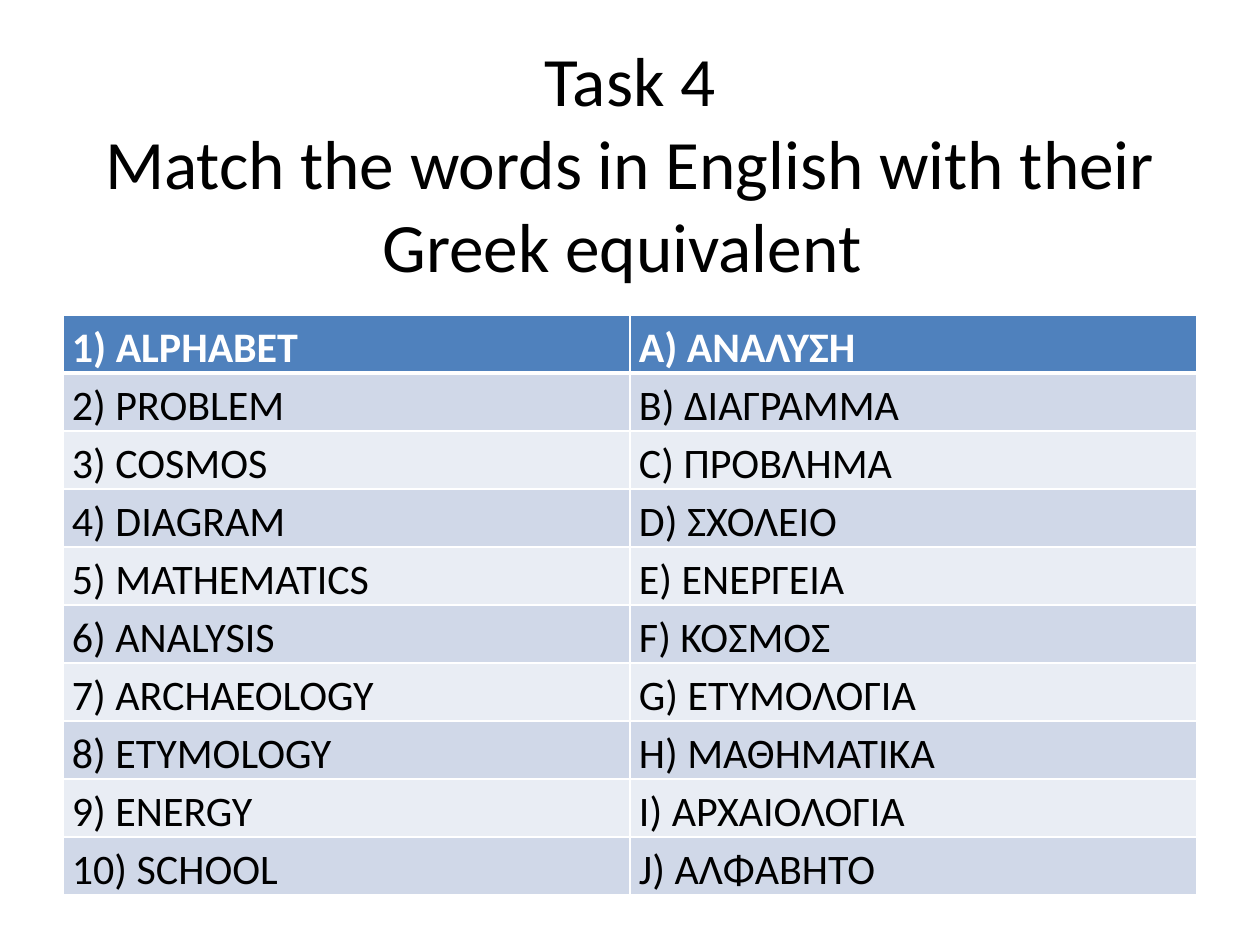
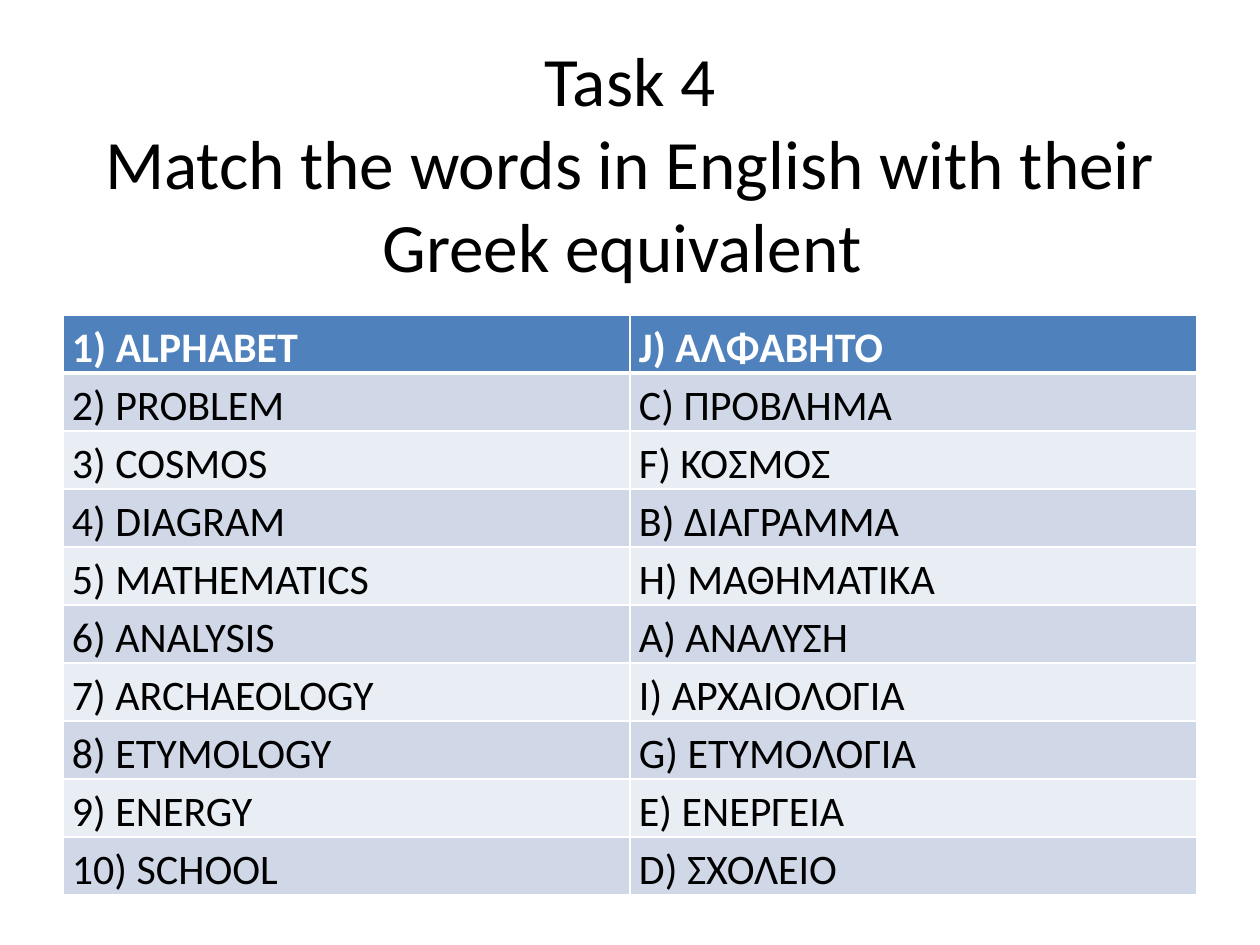
from lxml import etree
from pptx import Presentation
from pptx.dml.color import RGBColor
from pptx.enum.text import MSO_ANCHOR, PP_ALIGN
from pptx.oxml.ns import qn
from pptx.util import Emu, Pt

TITLE_LINES = ["Task 4", "Match the words in English with their Greek equivalent "]
ENGLISH = ["ALPHABET", "PROBLEM", "COSMOS", "DIAGRAM", "MATHEMATICS",
           "ANALYSIS", "ARCHAEOLOGY", "ETYMOLOGY", "ENERGY", "SCHOOL"]
GREEK = {
    "A": "ΑΝΑΛΥΣΗ", "B": "ΔΙΑΓΡΑΜΜΑ", "C": "ΠΡΟΒΛΗΜΑ", "D": "ΣΧΟΛΕΙΟ",
    "E": "ΕΝΕΡΓΕΙΑ", "F": "ΚΟΣΜΟΣ", "G": "ΕΤΥΜΟΛΟΓΙΑ", "H": "ΜΑΘΗΜΑΤΙΚΑ",
    "I": "ΑΡΧΑΙΟΛΟΓΙΑ", "J": "ΑΛΦΑΒΗΤΟ",
}
QUESTION_ORDER = "ABCDEFGHIJ"
ANSWER_ORDER = "JCFBHAIGED"

WHITE = RGBColor(0xFF, 0xFF, 0xFF)
BLACK = RGBColor(0x00, 0x00, 0x00)
HEADER_BLUE = RGBColor(0x4F, 0x81, 0xBD)
BANDS = [RGBColor(0xE9, 0xED, 0xF4), RGBColor(0xD0, 0xD8, 0xE8)]

PX_PER_INCH = 126
PAGE_SIZE = (1260, 945)
TITLE_BOX = (63, 38, 1134, 238)
TABLE_LEFT, TABLE_TOP, TABLE_WIDTH, ROW_HEIGHT = 63, 315, 1134, 58

TITLE_FRAME = {"margin_top": 10, "margin_bottom": 0, "margin_left": 13, "margin_right": 13}
CELL_MARGINS = {"margin_left": 9, "margin_right": 9, "margin_top": 0, "margin_bottom": 0}
TITLE_FONT = {"name": "Calibri", "size": Pt(39.6)}
CELL_FONT = {"name": "Calibri", "size": Pt(24)}


def px(length):
    return Emu(round(length * 914400 / PX_PER_INCH))


def set_all(target, values):
    for name, value in values.items():
        setattr(target, name, value)


def set_margins(target, margins):
    set_all(target, {name: px(length) for name, length in margins.items()})


def set_font(font, values, color):
    set_all(font, values)
    font.color.rgb = color


def add_title(page):
    box = page.shapes.add_textbox(*map(px, TITLE_BOX))
    frame = box.text_frame
    frame.word_wrap = True
    frame.vertical_anchor = MSO_ANCHOR.MIDDLE
    set_margins(frame, TITLE_FRAME)
    para = frame.paragraphs[0]
    para.alignment = PP_ALIGN.CENTER
    for number, line in enumerate(TITLE_LINES):
        if number:
            para.add_line_break()
        span = para.add_run()
        span.text = line
        set_font(span.font, TITLE_FONT, BLACK)


def add_borders(cell, top, bottom):
    """Draw white cell edges; top and bottom are widths in points."""
    properties = cell._tc.get_or_add_tcPr()
    for side, width in (("L", 1), ("R", 1), ("T", top), ("B", bottom)):
        edge = etree.SubElement(properties, qn(f"a:ln{side}"), w=str(Pt(width)))
        fill = etree.SubElement(edge, qn("a:solidFill"))
        etree.SubElement(fill, qn("a:srgbClr"), val=str(WHITE))


def fill_cell(cell, text, row):
    is_header = row == 0
    set_margins(cell, CELL_MARGINS)
    add_borders(cell, top=3 if row == 1 else 1, bottom=3 if is_header else 1)
    cell.fill.solid()
    cell.fill.fore_color.rgb = HEADER_BLUE if is_header else BANDS[row % 2]
    para = cell.text_frame.paragraphs[0]
    para.line_spacing = 1.15
    span = para.add_run()
    span.text = text
    set_font(span.font, CELL_FONT | {"bold": is_header},
             WHITE if is_header else BLACK)


def add_word_table(page, letters):
    pairs = [(f"{number}) {word}", f"{letter}) {GREEK[letter]}")
             for number, (word, letter) in enumerate(zip(ENGLISH, letters), 1)]
    table = page.shapes.add_table(
        len(pairs), 2, px(TABLE_LEFT), px(TABLE_TOP),
        px(TABLE_WIDTH), px(ROW_HEIGHT * len(pairs))).table
    for row, pair in enumerate(pairs):
        for column, text in enumerate(pair):
            fill_cell(table.cell(row, column), text, row)


def main():
    deck = Presentation()
    deck.slide_width, deck.slide_height = map(px, PAGE_SIZE)
    for letters in (QUESTION_ORDER, ANSWER_ORDER):
        page = deck.slides.add_slide(deck.slide_layouts[6])
        add_title(page)
        add_word_table(page, letters)
    deck.save("out.pptx")


if __name__ == "__main__":
    main()
